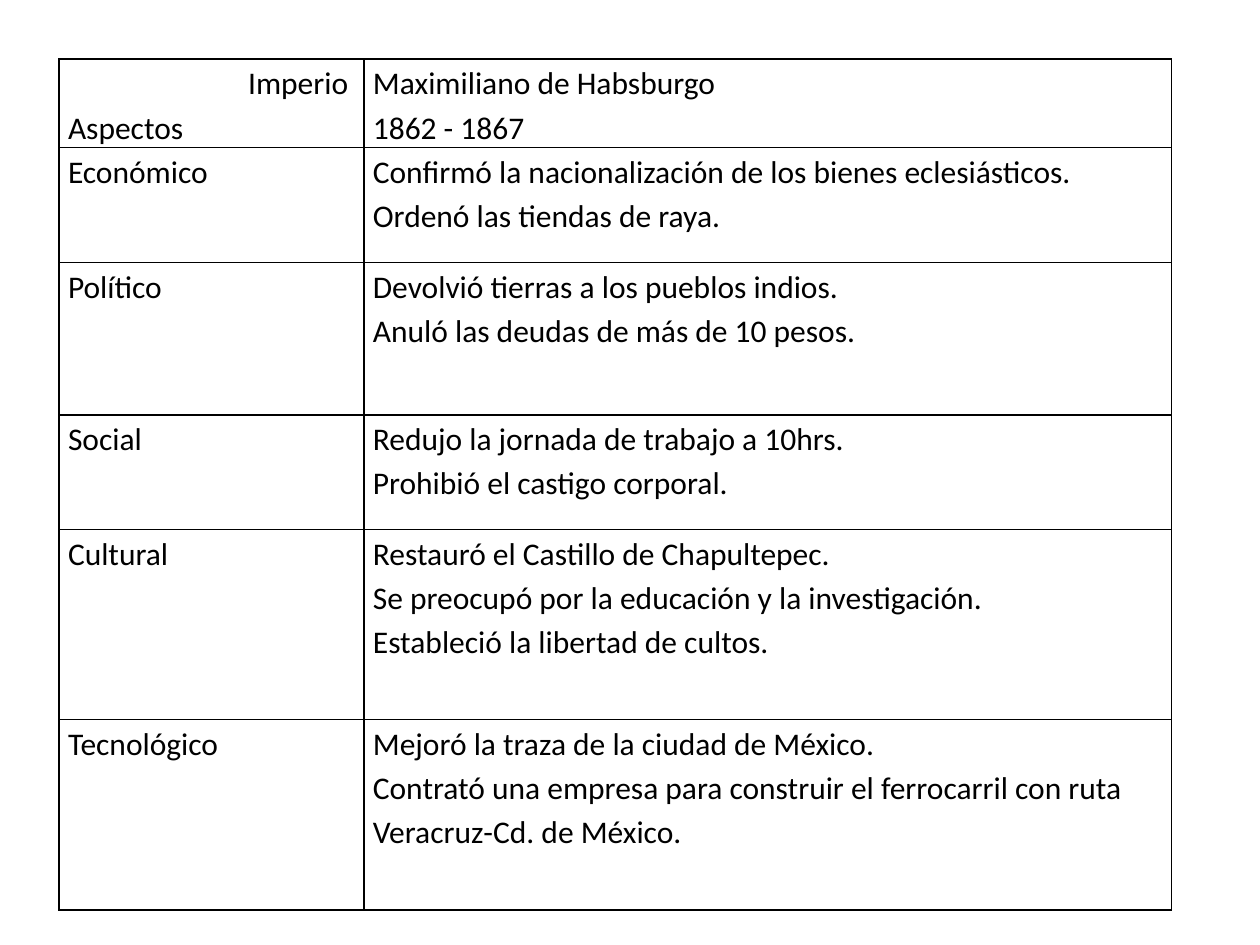
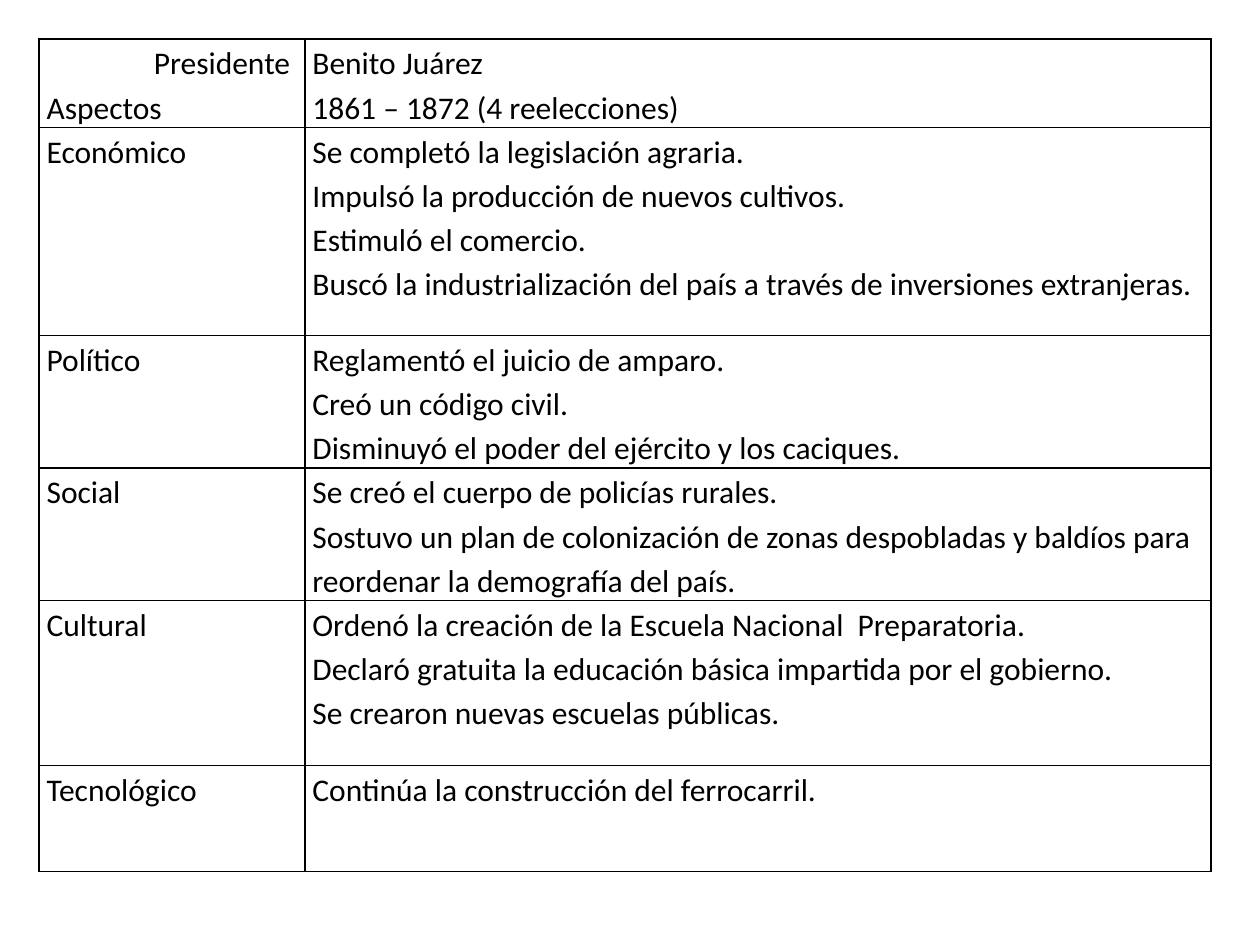
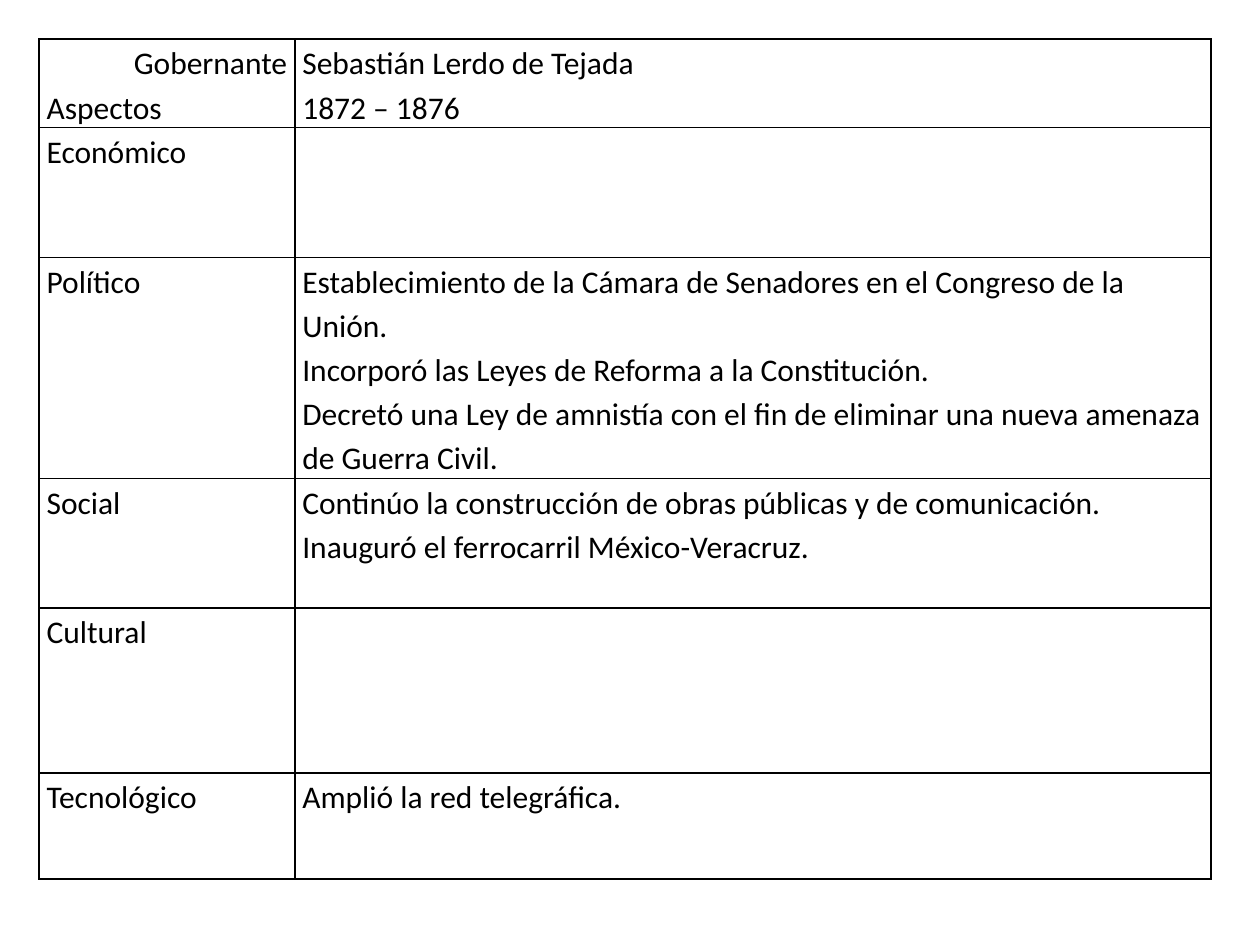
"""Build three tables comparing governments of nineteenth-century Mexico by aspect."""
from dataclasses import dataclass

from lxml import etree
from pptx import Presentation
from pptx import util as u
from pptx.dml import color
from pptx.enum import text
from pptx.oxml import ns


@dataclass(frozen=True)
class Theme:
    font: str = "Calibri"
    size: int = 18
    line_spacing: float = 1.15
    border_points: int = 1
    ink: str = "000000"
    paper: str = "FFFFFF"


THEME = Theme()
ASPECTS = ("Económico", "Político", "Social", "Cultural", "Tecnológico")
GOVERNMENTS = [
    {
        "role": "Imperio ",
        "ruler": ["Maximiliano de Habsburgo", "1862 - 1867"],
        "actions": [
            ["Confirmó la nacionalización de los bienes eclesiásticos.",
             "Ordenó las tiendas de raya."],
            ["Devolvió tierras a los pueblos indios.",
             "Anuló las deudas de más de 10 pesos."],
            ["Redujo la jornada de trabajo a 10hrs.",
             "Prohibió el castigo corporal."],
            ["Restauró el Castillo de Chapultepec.",
             "Se preocupó por la educación y la investigación.",
             "Estableció la libertad de cultos."],
            ["Mejoró la traza de la ciudad de México.",
             "Contrató una empresa para construir el ferrocarril con ruta Veracruz-Cd. de México."],
        ],
        "corner": 0.47,
        "margin": 0.07,
        "columns": (2.42, 6.41),
        "rows": (0.7, 0.91, 1.21, 0.91, 1.51, 1.51),
    },
    {
        "role": "Presidente ",
        "ruler": ["Benito Juárez", "1861 – 1872 (4 reelecciones)"],
        "actions": [
            ["Se completó la legislación agraria.",
             "Impulsó la producción de nuevos cultivos.",
             "Estimuló el comercio.",
             "Buscó la industrialización del país a través de inversiones extranjeras."],
            ["Reglamentó el juicio de amparo.",
             "Creó un código civil.",
             "Disminuyó el poder del ejército y los caciques."],
            ["Se creó el cuerpo de policías rurales.",
             "Sostuvo un plan de colonización de zonas despobladas y baldíos para reordenar la demografía del país."],
            ["Ordenó la creación de la Escuela Nacional  Preparatoria.",
             "Declaró gratuita la educación básica impartida por el gobierno.",
             "Se crearon nuevas escuelas públicas."],
            ["Continúa la construcción del ferrocarril."],
        ],
        "corner": 0.31,
        "margin": 0.06,
        "columns": (2.11, 7.19),
        "rows": (0.7, 1.65, 1.05, 1.05, 1.31, 0.84),
    },
    {
        "role": "Gobernante",
        "ruler": ["Sebastián Lerdo de Tejada", "1872 – 1876"],
        "actions": [
            [],
            ["Establecimiento de la Cámara de Senadores en el Congreso de la Unión.",
             "Incorporó las Leyes de Reforma a la Constitución.",
             "Decretó una Ley de amnistía con el fin de eliminar una nueva amenaza de Guerra Civil."],
            ["Continúo la construcción de obras públicas y de comunicación.",
             "Inauguró el ferrocarril México-Veracruz."],
            [],
            ["Amplió la red telegráfica."],
        ],
        "corner": 0.31,
        "margin": 0.06,
        "columns": (2.03, 7.27),
        "rows": (0.7, 1.03, 1.75, 1.03, 1.31, 0.84),
    },
]


def add_borders(cell):
    """Draw a thin line on the four sides of a cell."""
    properties = cell._tc.get_or_add_tcPr()
    for position, side in enumerate(("lnL", "lnR", "lnT", "lnB")):
        line = etree.Element(ns.qn(f"a:{side}"), w=str(u.Pt(THEME.border_points)))
        fill = etree.SubElement(line, ns.qn("a:solidFill"))
        etree.SubElement(fill, ns.qn("a:srgbClr"), val=THEME.ink)
        properties.insert(position, line)


def fill_cell(cell, lines, margin):
    """Style a cell and write one paragraph for each line."""
    cell.margin_left = cell.margin_right = u.Inches(margin)
    cell.margin_top = cell.margin_bottom = 0
    cell.fill.solid()
    cell.fill.fore_color.rgb = color.RGBColor.from_string(THEME.paper)
    add_borders(cell)
    frame = cell.text_frame
    for index, line in enumerate(lines):
        paragraph = frame.add_paragraph() if index else frame.paragraphs[0]
        paragraph.line_spacing = THEME.line_spacing
        run = paragraph.add_run()
        run.text = line
        run.font.name = THEME.font
        run.font.size = u.Pt(THEME.size)
        run.font.color.rgb = color.RGBColor.from_string(THEME.ink)


def add_government(presentation, government):
    """Add a slide with the table of one government."""
    slide = presentation.slides.add_slide(presentation.slide_layouts[6])
    columns, rows = government["columns"], government["rows"]
    corner = u.Inches(government["corner"])
    table = slide.shapes.add_table(
        len(rows), len(columns), corner, corner,
        u.Inches(sum(columns)), u.Inches(sum(rows)),
    ).table
    table.first_row = table.horz_banding = False
    for column, width in zip(table.columns, columns):
        column.width = u.Inches(width)
    for row, height in zip(table.rows, rows):
        row.height = u.Inches(height)

    content = [([government["role"], "Aspectos"], government["ruler"])]
    content += [([aspect], actions) for aspect, actions in zip(ASPECTS, government["actions"])]
    for row, entries in zip(table.rows, content):
        for cell, lines in zip(row.cells, entries):
            fill_cell(cell, lines, government["margin"])
    table.cell(0, 0).text_frame.paragraphs[0].alignment = text.PP_ALIGN.RIGHT


def main():
    """Build and save the presentation."""
    presentation = Presentation()
    presentation.slide_width = u.Inches(10)
    presentation.slide_height = u.Inches(7.5)
    for government in GOVERNMENTS:
        add_government(presentation, government)
    presentation.save("out.pptx")


if __name__ == "__main__":
    main()
